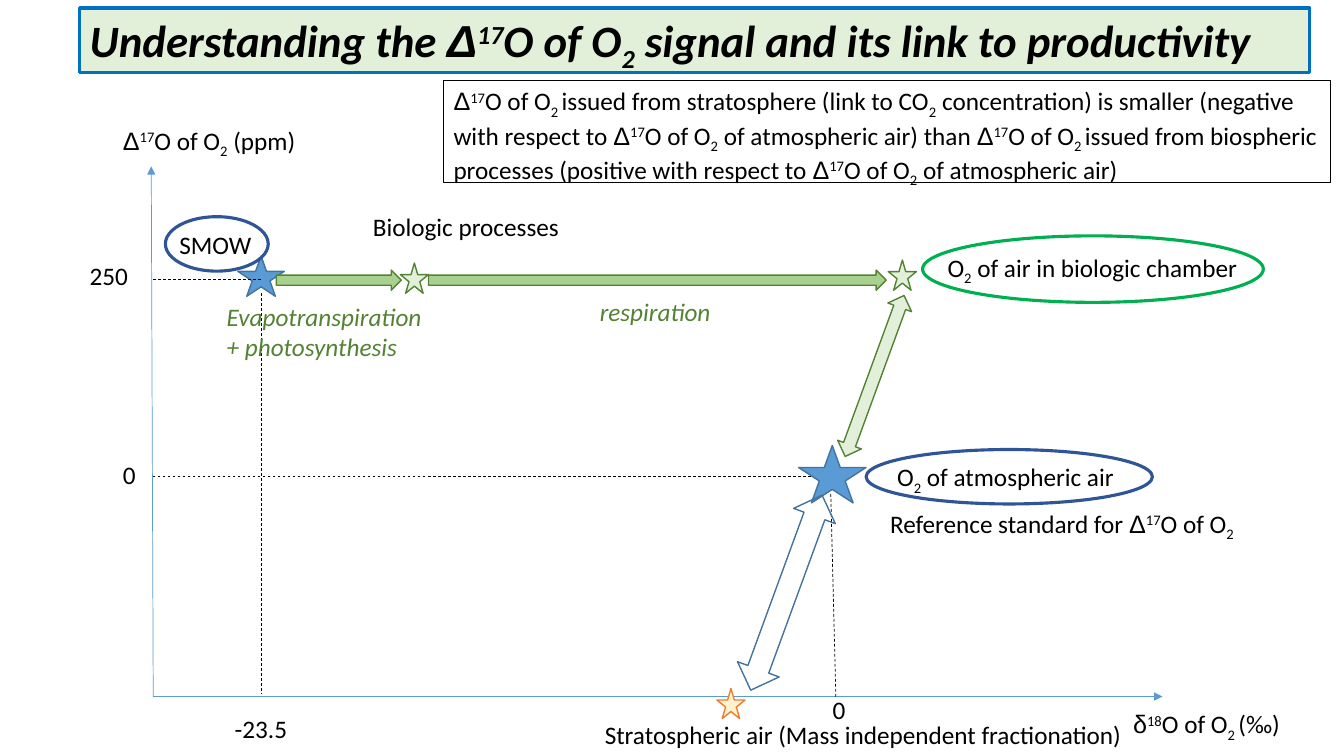
import pptx
import pptx.util
import pptx.dml.color
import pptx.enum.dml
import pptx.enum.shapes
import pptx.enum.text
import pptx.oxml
import pptx.oxml.ns

PX = 9144  # 100 px to the inch
SHAPE = pptx.enum.shapes.MSO_SHAPE
FIT = pptx.enum.text.MSO_AUTO_SIZE
rgb = pptx.dml.color.RGBColor.from_string
Pt = pptx.util.Pt

BLACK, BLUE, NAVY, STEEL = "000000", "5B9BD5", "2F5597", "43739E"
GREEN, MID_GREEN, PALE_GREEN = "548235", "A9D18E", "E2F0D9"

prs = pptx.Presentation()
prs.slide_width, prs.slide_height = 1333 * PX, 750 * PX
slide = prs.slides.add_slide(prs.slide_layouts[6])


def draw_line(ends, color):
    line = slide.shapes.add_connector(
        pptx.enum.shapes.MSO_CONNECTOR.STRAIGHT, *[v * PX for v in ends])
    line.line.color.rgb = rgb(color)
    line.line.width = Pt(0.5)
    pptx.oxml.ns.qn("a:effectLst")
    line._element.spPr.append(pptx.oxml.parse_xml(
        '<a:effectLst xmlns:a="http://schemas.openxmlformats.org/drawingml/2006/main"/>'))
    return line


def draw_shape(kind, box, fill, color, width=1, rotation=0):
    sp = slide.shapes.add_shape(kind, *[v * PX for v in box])
    sp.shadow.inherit = False
    sp.rotation = rotation
    if fill:
        sp.fill.solid()
        sp.fill.fore_color.rgb = rgb(fill)
    else:
        sp.fill.background()
    sp.line.color.rgb = rgb(color)
    sp.line.width = Pt(width)
    return sp


# Axes
for end in [(150, 165), (1153, 691)]:
    axis = draw_line((152, 691, *end), BLUE)
    axis.line._get_or_add_ln().append(pptx.oxml.parse_xml(
        '<a:tailEnd xmlns:a="http://schemas.openxmlformats.org/drawingml/2006/main"'
        ' type="triangle"/>'))

# SMOW and atmospheric air, with their guide lines
for box in [(236, 254, 46, 40), (792, 442, 67, 57)]:
    draw_shape(SHAPE.STAR_5_POINT, box, BLUE, STEEL)
for ends in [(804, 473, 151, 473), (824, 490, 829, 691),
             (259, 277, 150, 277), (259, 291, 259, 689)]:
    guide = draw_line(ends, BLACK)
    guide.line.dash_style = pptx.enum.dml.MSO_LINE.DASH

# Process arrows
draw_shape(SHAPE.UP_DOWN_ARROW, (855, 288, 25, 170), PALE_GREEN, GREEN, rotation=20.1)
draw_shape(SHAPE.UP_DOWN_ARROW, (758, 485, 44, 206), None, STEEL, rotation=20.1)
for left, length in [(274, 124), (425, 454)]:
    draw_shape(SHAPE.RIGHT_ARROW, (left, 268, length, 20), MID_GREEN, GREEN)

# Small stars: photosynthesis, biologic chamber, stratosphere
for left, top, fill, color in [(397, 261, PALE_GREEN, GREEN),
                               (881, 258, PALE_GREEN, GREEN),
                               (711, 683, "FFF2CC", "ED7D31")]:
    draw_shape(SHAPE.STAR_5_POINT, (left, top, 28, 30), fill, color)

# Rings around the air labels
for box, color in [((859, 446, 284, 54), NAVY), ((915, 234, 338, 66), "00B050"),
                   ((164, 215, 102, 54), NAVY)]:
    draw_shape(SHAPE.OVAL, box, None, color, 2.25)

# Texts: runs are parted by |, ^ marks superscript and _ subscript
title = draw_shape(SHAPE.RECTANGLE, (79, 8, 1220, 64), PALE_GREEN, "0070C0", 2.25)
summary = draw_shape(SHAPE.RECTANGLE, (440, 80, 880, 101), None, BLACK, 0.75)
D17O = "Δ|^17|O of O|"
texts = [
    (title, f"Understanding the |{D17O}_2| signal and its link to productivity", False, BLACK),
    (summary, f"{D17O}_2 |issued from stratosphere (link to CO|_2| concentration) is smaller "
              f"(negative with respect to |{D17O}_2| of atmospheric air) than |{D17O}_2 |issued "
              f"from biospheric processes (positive with respect to |{D17O}_2| of atmospheric air)",
     True, BLACK),
]
for box, text, wrap, color in [
    ((168, 223, 92, 40), "SMOW", False, BLACK),
    ((880, 453, 243, 40), "O|_2| of atmospheric air", False, BLACK),
    ((930, 245, 316, 40), "O|_2| of air in biologic chamber", False, BLACK),
    ((360, 205, 207, 40), "Biologic processes", False, BLACK),
    ((873, 499, 380, 40), f"Reference standard for |{D17O}_2", False, BLACK),
    ((590, 709, 543, 40), "Stratospheric air (Mass independent fractionation)", False, BLACK),
    ((112, 119, 200, 40), f"{D17O}_2| (ppm)", False, BLACK),
    ((1114, 698, 170, 40), "δ|^18|O of O|_2 |(‰)", False, BLACK),
    ((79, 253, 59, 40), "250", False, BLACK),
    ((112, 451, 33, 40), "0", False, BLACK),
    ((816, 684, 33, 40), "0", False, BLACK),
    ((223, 703, 73, 40), "-23.5", False, BLACK),
    ((215, 294, 219, 71), "Evapotranspiration + photosynthesis", True, GREEN),
    ((585, 289, 175, 40), "respiration", True, GREEN),
]:
    texts.append((slide.shapes.add_textbox(*[v * PX for v in box]), text, wrap, color))

for sp, text, wrap, color in texts:
    tf = sp.text_frame
    tf.word_wrap = wrap
    tf.auto_size = FIT.NONE if sp is summary else FIT.SHAPE_TO_FIT_TEXT
    tf.vertical_anchor = pptx.enum.text.MSO_ANCHOR.TOP
    p = tf.paragraphs[0]
    p.alignment = pptx.enum.text.PP_ALIGN.LEFT
    for part in text.split("|"):
        r = p.add_run()
        r.text = part.lstrip("^_")
        r.font.name = "Arial" if part in "Δδ" else "Calibri"
        r.font.size = Pt(32 if sp is title else 18)
        r.font.color.rgb = rgb(color)
        r.font.bold = sp is title
        r.font.italic = sp is title or color == GREEN
        if part[0] in "^_":
            r.font._element.set("baseline", "30000" if part[0] == "^" else "-25000")

prs.save("out.pptx")
